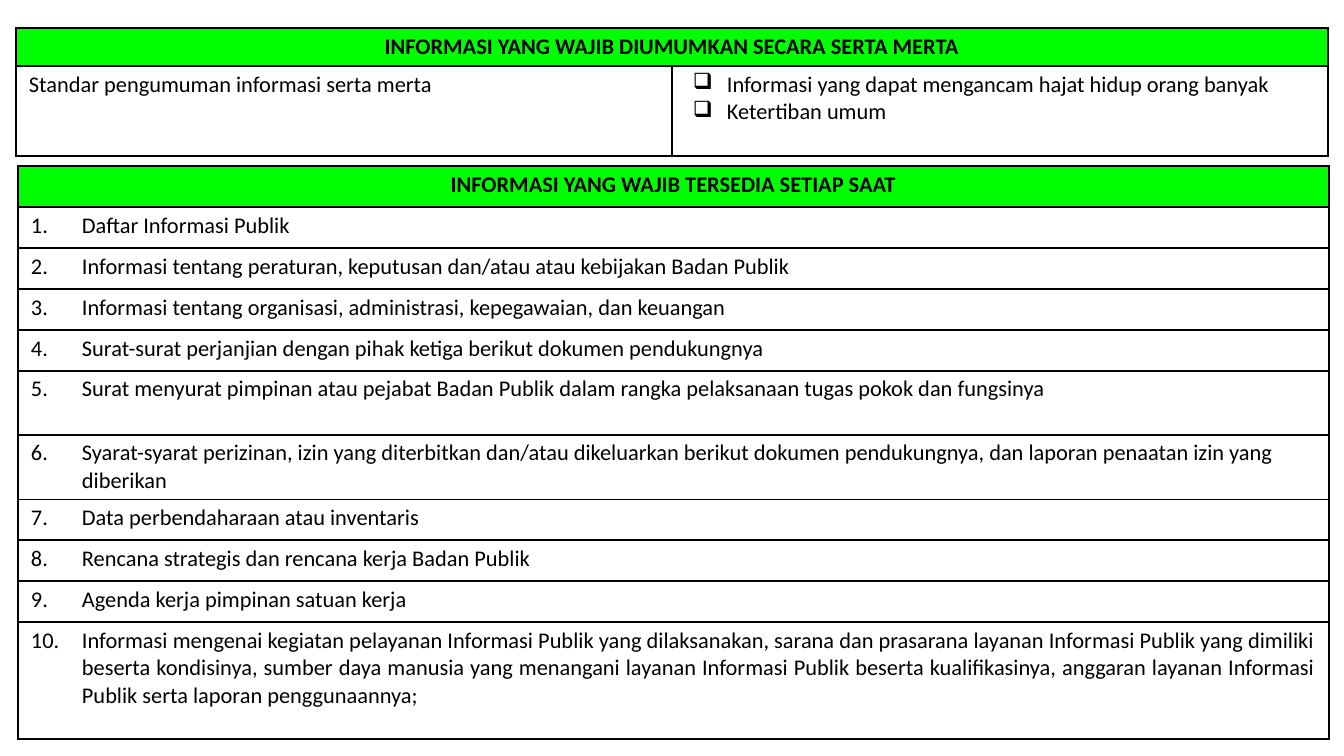
from lxml import etree
from pptx import Presentation
from pptx.dml.color import RGBColor
from pptx.enum.text import PP_ALIGN
from pptx.oxml.ns import qn
from pptx.util import Pt

CENTER, LEFT, JUST = PP_ALIGN.CENTER, PP_ALIGN.LEFT, PP_ALIGN.JUSTIFY
PX = 6804
HUES = {"ink": "000000", "head": "00FF00"}
FONT = "Calibri"

ALERTS = [
    "Informasi yang dapat mengancam hajat hidup orang banyak",
    "Ketertiban umum",
]
ITEMS = [
    ("Daftar Informasi Publik", JUST, 41),
    ("Informasi tentang peraturan, keputusan dan/atau atau kebijakan Badan Publik", LEFT, 41),
    ("Informasi tentang organisasi, administrasi, kepegawaian, dan keuangan", LEFT, 41),
    ("Surat-surat perjanjian dengan pihak ketiga berikut dokumen pendukungnya", JUST, 41),
    ("Surat menyurat pimpinan atau pejabat Badan Publik dalam rangka "
     "pelaksanaan tugas pokok dan fungsinya", LEFT, 64),
    ("Syarat-syarat perizinan, izin yang diterbitkan dan/atau dikeluarkan berikut "
     "dokumen pendukungnya, dan laporan penaatan izin yang diberikan", LEFT, 64),
    ("Data perbendaharaan atau inventaris", JUST, 41),
    ("Rencana strategis dan rencana kerja Badan Publik", JUST, 41),
    ("Agenda kerja pimpinan satuan kerja", JUST, 41),
    ("Informasi mengenai kegiatan pelayanan Informasi Publik yang dilaksanakan, "
     "sarana dan prasarana layanan Informasi Publik yang dimiliki beserta kondisinya, "
     "sumber daya manusia yang menangani layanan Informasi Publik beserta kualifikasinya, "
     "anggaran layanan Informasi Publik serta laporan penggunaannya;", JUST, 117),
]


def color(name):
    return RGBColor.from_string(HUES[name])


def border(cell):
    props = cell._tc.get_or_add_tcPr()
    for side in ("lnL", "lnR", "lnT", "lnB"):
        line = etree.SubElement(props, qn(f"a:{side}"), w=str(Pt(1)))
        fill = etree.SubElement(line, qn("a:solidFill"))
        etree.SubElement(fill, qn("a:srgbClr"), val=HUES["ink"])


def grid(slide, box, cols, rows):
    left, top, width, height = (n * PX for n in box)
    table = slide.shapes.add_table(len(rows), len(cols), left, top, width, height).table
    table.first_row = table.horz_banding = False
    for col, size in zip(table.columns, cols):
        col.width = size * PX
    for row, size in zip(table.rows, rows):
        row.height = size * PX
    for cell in table.iter_cells():
        border(cell)
        cell.fill.background()
        cell.margin_left = cell.margin_right = 13 * PX
        cell.margin_top = cell.margin_bottom = 5 * PX
    return table


def write(para, text, align=JUST, bold=False):
    para.alignment = align
    run = para.add_run()
    run.text = text
    run.font.name = FONT
    run.font.size = Pt(12)
    run.font.bold = bold
    run.font.color.rgb = color("ink")


def bullet(para, left, hang, tag, **attrs):
    props = para._p.get_or_add_pPr()
    props.set("marL", str(left * PX))
    props.set("indent", str(-hang * PX))
    etree.SubElement(props, qn(f"a:{tag}"), **attrs)


def title(cell, text):
    cell.fill.solid()
    cell.fill.fore_color.rgb = color("head")
    write(cell.text_frame.paragraphs[0], text, CENTER, True)


def urgent(slide, box):
    half = box[2] // 2
    table = grid(slide, box, [half, half], [38, box[3] - 38])
    table.cell(0, 0).merge(table.cell(0, 1))
    title(table.cell(0, 0), "INFORMASI YANG WAJIB DIUMUMKAN SECARA SERTA MERTA")
    write(table.cell(1, 0).text_frame.paragraphs[0], "Standar pengumuman informasi serta merta")
    frame = table.cell(1, 1).text_frame
    for i, text in enumerate(ALERTS):
        para = frame.add_paragraph() if i else frame.paragraphs[0]
        para.level = 1
        bullet(para, 42, 34, "buChar", char="❑")
        write(para, text)


def always(slide, box):
    table = grid(slide, box, [box[2]], [41] + [item[2] for item in ITEMS])
    title(table.cell(0, 0), "INFORMASI YANG WAJIB TERSEDIA SETIAP SAAT")
    for i, (text, align, _) in enumerate(ITEMS, 1):
        para = table.cell(i, 0).text_frame.paragraphs[0]
        bullet(para, 51, 51, "buAutoNum", type="arabicPeriod", startAt=str(i))
        write(para, text, align)


def main():
    deck = Presentation()
    deck.slide_width, deck.slide_height = 1344 * PX, 756 * PX
    slide = deck.slides.add_slide(deck.slide_layouts[6])
    urgent(slide, (16, 28, 1312, 128))
    always(slide, (18, 166, 1311, 573))
    deck.save("out.pptx")


if __name__ == "__main__":
    main()
